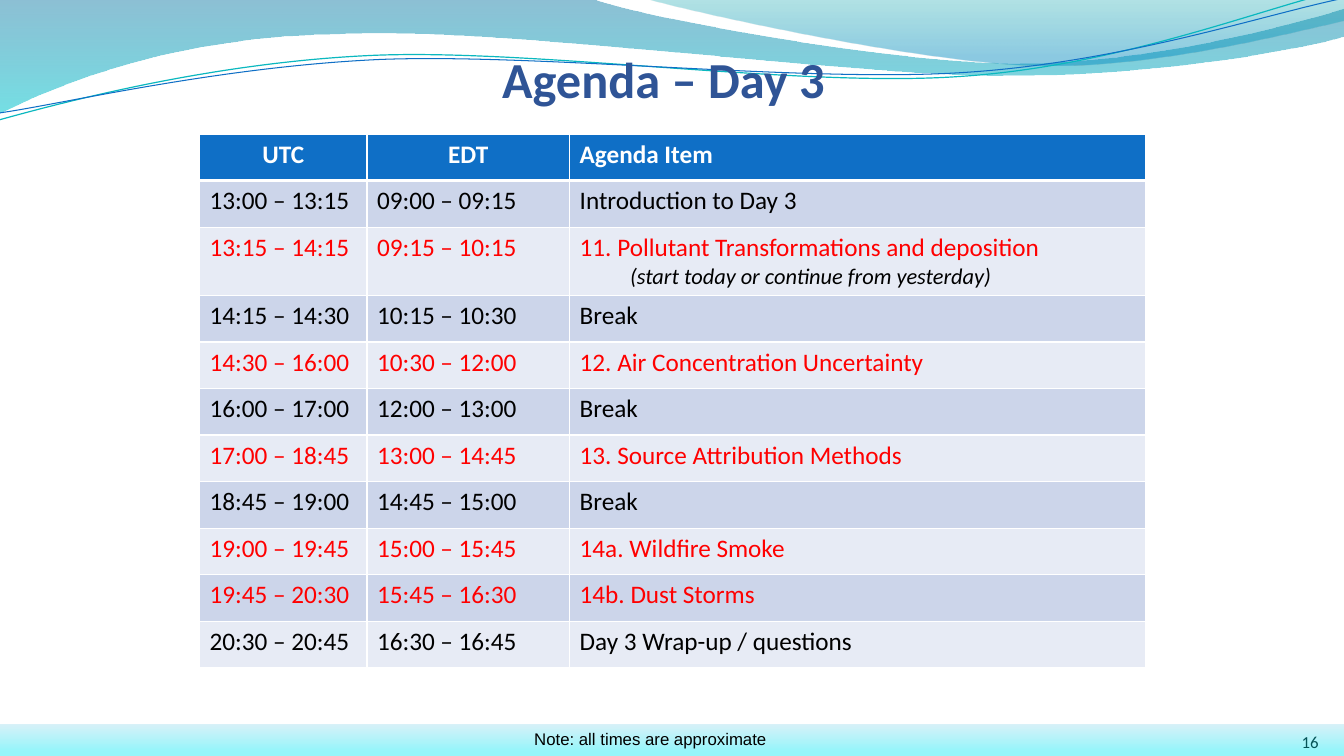
import math

import pptx
import pptx.dml.color
import pptx.enum.text
import pptx.oxml.ns
import pptx.util
from lxml import etree

# Grid: 13.33 columns by 7.5 rows, each one inch
COLUMNS, ROWS = 13.33, 7.5
LEFT = pptx.enum.text.PP_ALIGN.LEFT
CENTER = pptx.enum.text.PP_ALIGN.CENTER
RIGHT = pptx.enum.text.PP_ALIGN.RIGHT
TOP = pptx.enum.text.MSO_ANCHOR.TOP
MIDDLE = pptx.enum.text.MSO_ANCHOR.MIDDLE
BOTTOM = pptx.enum.text.MSO_ANCHOR.BOTTOM
FIXED = pptx.enum.text.MSO_AUTO_SIZE.NONE
GROW = pptx.enum.text.MSO_AUTO_SIZE.SHAPE_TO_FIT_TEXT

BLACK, RED, WHITE, BLUE = "000000", "FF0000", "FFFFFF", "0F6FC6"
BANDS = ["CCD5EA", "E7EBF5"]
COLUMN_WIDTHS = [1.66, 2.01, 5.71]
TABLE_HEIGHT, NOTED_ROW_HEIGHT = 5.28, 0.66

HEADINGS = ["UTC", "EDT", "Agenda Item"]
# UTC, EDT, item, text colour, note under the item
SESSIONS = [
    ("13:00 – 13:15", "09:00 – 09:15", "Introduction to Day 3", BLACK, ""),
    ("13:15 – 14:15", "09:15 – 10:15", "11. Pollutant Transformations and deposition", RED,
     "(start today or continue from yesterday)"),
    ("14:15 – 14:30", "10:15 – 10:30", "Break", BLACK, ""),
    ("14:30 – 16:00", "10:30 – 12:00", "12. Air Concentration Uncertainty", RED, ""),
    ("16:00 – 17:00", "12:00 – 13:00", "Break", BLACK, ""),
    ("17:00 – 18:45", "13:00 – 14:45", "13. Source Attribution Methods", RED, ""),
    ("18:45 – 19:00", "14:45 – 15:00", "Break", BLACK, ""),
    ("19:00 – 19:45", "15:00 – 15:45", "14a. Wildfire Smoke", RED, ""),
    ("19:45 – 20:30", "15:45 – 16:30", "14b. Dust Storms", RED, ""),
    ("20:30 – 20:45", "16:30 – 16:45", "Day 3 Wrap-up / questions", BLACK, ""),
]
# Every row without a note shares the rest of the table equally
ROW_HEIGHT = (TABLE_HEIGHT - NOTED_ROW_HEIGHT) / len(SESSIONS)

# Outlines: a pair is a straight step, six numbers are a Bezier curve
WIDE_WAVE = [
    (0, 0), (5.87, -0.01),
    (6.34, 0.17, 8.85, 0.63, 10.11, 0.63), (11.38, 0.63, 12.78, 0.26, 13.33, 0.09),
    (13.35, 0.36),
    (13.11, 0.44, 11.6, 0.76, 9.94, 0.75), (8.29, 0.75, 5.09, 0.28, 3.43, 0.34),
    (1.72, 0.36, 0.61, 0.83, -0.01, 1.13), (0, 0),
]
RIGHT_WAVE = [
    (6.39, -0.01),
    (6.79, 0.11, 9.09, 0.62, 10.25, 0.65), (11.41, 0.69, 12.82, 0.32, 13.33, 0.21),
    (13.33, 0), (6.39, -0.01),
]
TEAL_LINE = [
    (-0.01, 1.19),
    (0.64, 1.01, 2.11, 0.62, 3.69, 0.55), (5.27, 0.48, 7.9, 0.87, 9.5, 0.76),
    (11.1, 0.66, 12.52, 0.08, 13.31, -0.1),
]
BLUE_LINE = [
    (0, 1.12),
    (0.63, 1.03, 2.18, 0.66, 3.78, 0.59), (5.37, 0.53, 7.96, 0.82, 9.55, 0.72),
    (11.15, 0.62, 12.55, 0.14, 13.34, -0.02),
]
SWOOSH_TILT = 2.7


def grid(*lengths):
    return [pptx.util.Inches(length) for length in lengths]


def paint(color_format, color):
    color_format.rgb = pptx.dml.color.RGBColor.from_string(color)


def add_gradient(shape, stops):
    """Fill from top to bottom; each stop is position, colour, opacity in percent."""
    shape.fill.gradient()
    shape.fill.gradient_angle = 270
    for stop, (position, color, _) in zip(shape.fill.gradient_stops, stops):
        stop.position = position / 100
        paint(stop.color, color)
    colors = shape.element.spPr.iter(pptx.oxml.ns.qn("a:srgbClr"))
    for color_element, (_, _, opacity) in zip(colors, stops):
        if opacity < 100:
            alpha = etree.SubElement(color_element, pptx.oxml.ns.qn("a:alpha"))
            alpha.set("val", str(opacity * 1000))


def turn(point, center, degrees):
    angle = math.radians(degrees)
    across, down = point[0] - center[0], point[1] - center[1]
    return (center[0] + across * math.cos(angle) - down * math.sin(angle),
            center[1] + across * math.sin(angle) + down * math.cos(angle))


def add_outline(slide, outline, close, center=(0, 0), tilt=0):
    """Draw the level outline, curves included, then tilt it back around its center."""
    points = [turn(segment[index:index + 2], center, tilt)
              for segment in outline for index in range(0, len(segment), 2)]
    start, *rest = [grid(*point) for point in points]
    builder = slide.shapes.build_freeform(*start, scale=1.0)
    builder.add_line_segments(rest, close=close)
    shape = builder.convert_to_shape()
    shape.shadow.inherit = False
    shape.rotation = -tilt

    # Join the three steps of each curve into one Bezier segment
    steps = iter(list(shape.element.iter(pptx.oxml.ns.qn("a:lnTo"))))
    for segment in outline[1:]:
        step = next(steps)
        if len(segment) == 6:
            curve = etree.Element(pptx.oxml.ns.qn("a:cubicBezTo"))
            step.addprevious(curve)
            for control in (step, next(steps), next(steps)):
                curve.append(control[0])
                control.getparent().remove(control)
    return shape


def add_wave(slide, outline, stops):
    shape = add_outline(slide, outline, True)
    add_gradient(shape, stops)
    shape.line.fill.background()


def add_swoosh(slide, outline, center, color, width):
    shape = add_outline(slide, outline, False, center, SWOOSH_TILT)
    shape.fill.background()
    paint(shape.line.color, color)
    shape.line.width = pptx.util.Pt(width)


def add_run(paragraph, text, size, color, font="Calibri", bold=False, italic=False):
    run = paragraph.add_run()
    run.text = text
    run.font.name, run.font.size = font, pptx.util.Pt(size)
    run.font.bold, run.font.italic = bold, italic
    paint(run.font.color, color)


def set_text(shape, text, size, color, anchor, alignment=LEFT, fit=GROW, **style):
    frame = shape.text_frame
    frame.auto_size = fit
    frame.word_wrap = fit == FIXED
    frame.vertical_anchor = anchor
    frame.paragraphs[0].alignment = alignment
    add_run(frame.paragraphs[0], text, size, color, **style)


def add_border(cell, side, width):
    properties = cell._tc.get_or_add_tcPr()
    line = etree.Element(pptx.oxml.ns.qn("a:ln" + side), w=str(pptx.util.Pt(width)))
    fill = etree.SubElement(line, pptx.oxml.ns.qn("a:solidFill"))
    etree.SubElement(fill, pptx.oxml.ns.qn("a:srgbClr"), val=WHITE)
    properties.insert("LRTB".index(side), line)


def fill_cell(cell, text, color, background, alignment=LEFT, bold=False):
    cell.fill.solid()
    paint(cell.fill.fore_color, background)
    paragraph = cell.text_frame.paragraphs[0]
    paragraph.alignment = alignment
    add_run(paragraph, text, 18, color, bold=bold)


def add_agenda(slide):
    table = slide.shapes.add_table(len(SESSIONS) + 1, len(HEADINGS),
                                   *grid(1.98, 1.33, sum(COLUMN_WIDTHS), TABLE_HEIGHT)).table
    for column, width in zip(table.columns, COLUMN_WIDTHS):
        column.width = pptx.util.Inches(width)
    table.rows[0].height = pptx.util.Inches(ROW_HEIGHT)
    for index, heading in enumerate(HEADINGS):
        cell = table.cell(0, index)
        fill_cell(cell, heading, WHITE, BLUE, LEFT if index == 2 else CENTER, True)
        for side in "LRTB":
            add_border(cell, side, 3 if side == "B" else 1)
    for number, (*texts, color, note) in enumerate(SESSIONS, 1):
        table.rows[number].height = pptx.util.Inches(NOTED_ROW_HEIGHT if note else ROW_HEIGHT)
        for index, text in enumerate(texts):
            fill_cell(table.cell(number, index), text, color, BANDS[(number - 1) % 2])
        if note:
            paragraph = table.cell(number, 2).text_frame.add_paragraph()
            paragraph.level = 1
            add_run(paragraph, note, 16, BLACK, italic=True)


def main():
    presentation = pptx.Presentation()
    presentation.slide_width, presentation.slide_height = grid(COLUMNS, ROWS)
    slide = presentation.slides.add_slide(presentation.slide_layouts[5])

    # Waves at the top
    add_wave(slide, WIDE_WAVE, [(0, "0074A1", 45), (100, "00C6CF", 55)])
    add_wave(slide, RIGHT_WAVE, [(0, "00A1A9", 30), (80, "008BBF", 45)])
    add_swoosh(slide, TEAL_LINE, (6.65, 0.58), "0AB8BF", 0.85)
    add_swoosh(slide, BLUE_LINE, (6.67, 0.59), BLUE, 0.75)

    # Footer strip and slide number
    strip = slide.shapes.add_shape(1, *grid(0, 7.18, COLUMNS, 0.32))
    strip.shadow.inherit = False
    strip.line.fill.background()
    add_gradient(strip, [(0, "D8F1F8", 100), (87, "94F5FA", 100)])
    number = slide.shapes.add_textbox(*grid(12.25, 7.06, 0.83, 0.4))
    set_text(number, "16", 12, "055357", BOTTOM, RIGHT, FIXED)
    frame = number.text_frame
    frame.margin_left = frame.margin_top = frame.margin_right = frame.margin_bottom = 0

    add_agenda(slide)

    # Title, in front of the waves
    title = slide.shapes.title
    title.left, title.top, title.width, title.height = grid(4.88, 0.43, 3.44, 0.71)
    set_text(title, "Agenda – Day 3", 36, "2F5496", TOP, bold=True)
    title.text_frame.paragraphs[0].space_before = pptx.util.Pt(18)
    title.element.getparent().append(title.element)

    note = slide.shapes.add_textbox(*grid(5.2, 7.18, 2.52, 0.3))
    set_text(note, "Note: all times are approximate", 12, BLACK, MIDDLE, font="Arial")

    presentation.save("out.pptx")


if __name__ == "__main__":
    main()
